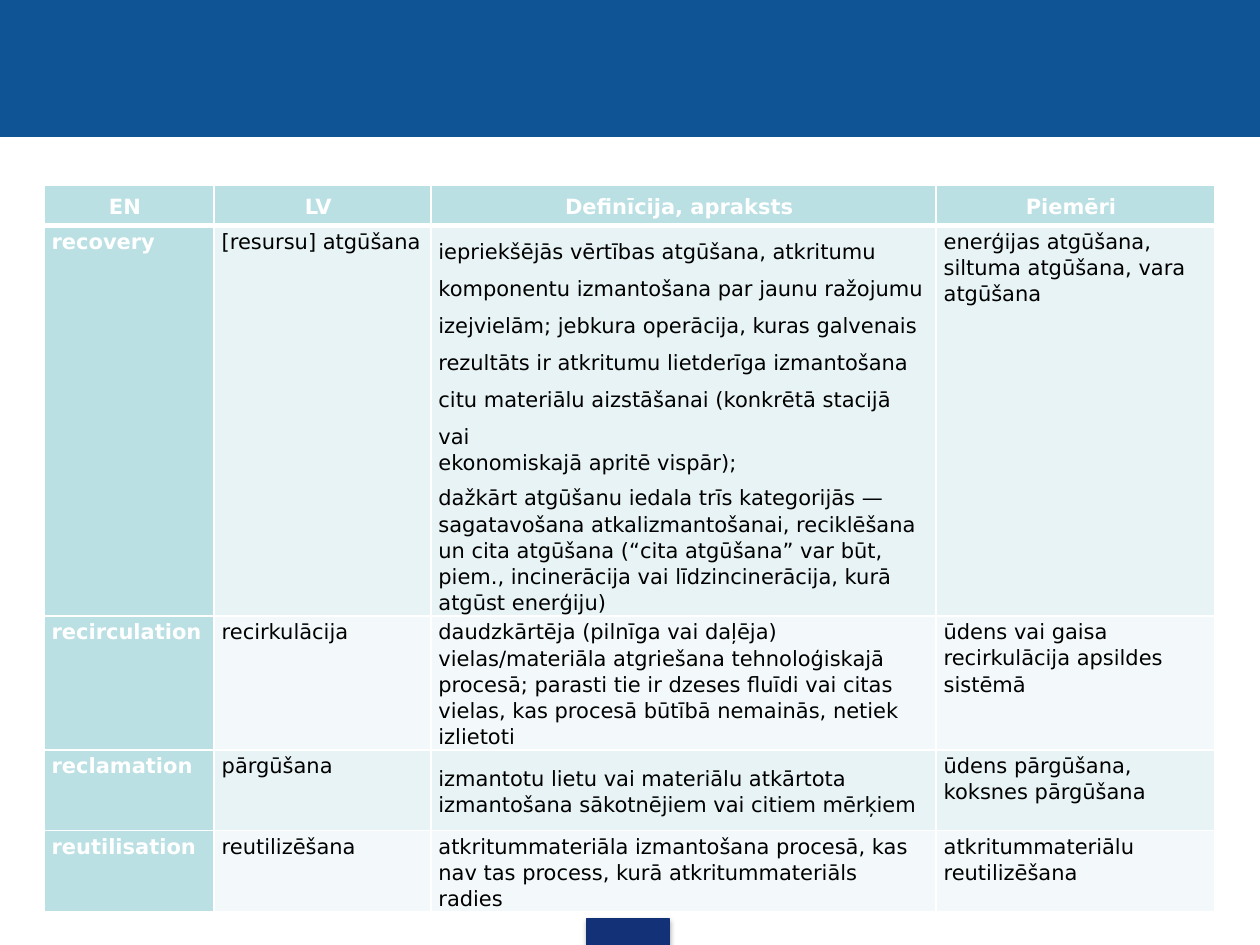
from dataclasses import dataclass

import pptx
import pptx.dml.color
import pptx.enum.shapes
import pptx.enum.text
import pptx.oxml
import pptx.oxml.ns
import pptx.util
from pptx.util import Inches

MIDDLE = pptx.enum.text.MSO_ANCHOR.MIDDLE
TOP = pptx.enum.text.MSO_ANCHOR.TOP
CENTER = pptx.enum.text.PP_ALIGN.CENTER
LEFT = pptx.enum.text.PP_ALIGN.LEFT


@dataclass(frozen=True)
class Theme:
    font: str = "DejaVu Sans"
    size: float = 12
    banner: str = "0F5494"
    tab: str = "133176"
    white: str = "FFFFFF"
    black: str = "000000"
    heading: str = "BBE0E3"
    bands: tuple[str, str] = ("E7F3F4", "F3F9FA")
    thin: float = 1
    thick: float = 3


@dataclass(frozen=True)
class Para:
    text: str
    spacing: float = 1.07
    after: float = 0


@dataclass(frozen=True)
class Term:
    english: str
    latvian: str
    definition: tuple[Para, ...]
    examples: tuple[Para, ...]
    height: float


THEME = Theme()
HEADINGS = ("EN ", "LV ", "Definīcija, apraksts ", "Piemēri ")
COLUMN_WIDTHS = (1.35, 1.72, 4.01, 2.21)
HEADER_HEIGHT = 0.32
DEFINITION_COLUMN = 2

TERMS = (
    Term(
        "recovery",
        "[resursu] atgūšana",
        (
            Para("iepriekšējās vērtības atgūšana, atkritumu komponentu izmantošana "
                 "par jaunu ražojumu izejvielām; jebkura operācija, kuras galvenais "
                 "rezultāts ir atkritumu lietderīga izmantošana citu materiālu "
                 "aizstāšanai (konkrētā stacijā vai", spacing=1.5),
            Para("ekonomiskajā apritē vispār);", after=5),
            Para("dažkārt atgūšanu iedala trīs kategorijās — sagatavošana "
                 "atkalizmantošanai, reciklēšana un cita atgūšana (“cita atgūšana” "
                 "var būt, piem., incinerācija vai līdzincinerācija, kurā atgūst "
                 "enerģiju)"),
        ),
        (Para("enerģijas atgūšana, siltuma atgūšana, vara atgūšana"),),
        2.78,
    ),
    Term(
        "recirculation",
        "recirkulācija",
        (Para("daudzkārtēja (pilnīga vai daļēja) vielas/materiāla atgriešana "
              "tehnoloģiskajā procesā; parasti tie ir dzeses fluīdi vai citas "
              "vielas, kas procesā būtībā nemainās, netiek izlietoti"),),
        (Para("ūdens vai gaisa recirkulācija apsildes sistēmā"),),
        0.97,
    ),
    Term(
        "reclamation",
        "pārgūšana",
        (Para("izmantotu lietu vai materiālu atkārtota izmantošana sākotnējiem "
              "vai citiem mērķiem"),),
        (Para("ūdens pārgūšana,"), Para("koksnes pārgūšana")),
        0.64,
    ),
    Term(
        "reutilisation",
        "reutilizēšana",
        (Para("atkritummateriāla izmantošana procesā, kas nav tas process, kurā "
              "atkritummateriāls radies"),),
        (Para("atkritummateriālu reutilizēšana"),),
        0.64,
    ),
)


def rgb(value: str) -> pptx.dml.color.RGBColor:
    return pptx.dml.color.RGBColor.from_string(value)


def add_bar(slide, left: float, top: float, width: float, height: float, color: str):
    sp = slide.shapes.add_shape(
        pptx.enum.shapes.MSO_SHAPE.RECTANGLE,
        Inches(left), Inches(top), Inches(width), Inches(height))
    sp.shadow.inherit = False
    sp.fill.solid()
    sp.fill.fore_color.rgb = rgb(color)
    sp.line.color.rgb = rgb(color)
    sp.line.width = pptx.util.Pt(0.75)
    return sp


def add_soft_shadow(sp) -> None:
    """Fill the shape's empty effect list with a shadow that falls downwards."""
    effects = sp._element.spPr.find(pptx.oxml.ns.qn("a:effectLst"))
    effects.append(pptx.oxml.parse_xml(
        f'<a:outerShdw {pptx.oxml.ns.nsdecls("a")} blurRad="{pptx.util.Pt(3.1)}" '
        f'dist="{pptx.util.Pt(1.8)}" dir="5400000" rotWithShape="0">'
        f'<a:srgbClr val="{THEME.black}"><a:alpha val="35000"/></a:srgbClr>'
        '</a:outerShdw>'))


def set_borders(cell, top: float, bottom: float) -> None:
    widths = {"L": THEME.thin, "R": THEME.thin, "T": top, "B": bottom}
    tc_pr = cell._tc.get_or_add_tcPr()
    for index, (side, width) in enumerate(widths.items()):
        tc_pr.insert(index, pptx.oxml.parse_xml(
            f'<a:ln{side} {pptx.oxml.ns.nsdecls("a")} w="{pptx.util.Pt(width)}">'
            f'<a:solidFill><a:srgbClr val="{THEME.white}"/></a:solidFill>'
            f'</a:ln{side}>'))


def fill_cell(cell, paras: tuple[Para, ...], row: int, column: int) -> None:
    header = row == 0
    heading = header or column == 0
    cell.margin_left, cell.margin_right = Inches(0.06), Inches(0.07)
    cell.margin_top, cell.margin_bottom = Inches(0.02), Inches(0)
    cell.vertical_anchor = MIDDLE if header or column == DEFINITION_COLUMN else TOP
    cell.fill.solid()
    cell.fill.fore_color.rgb = rgb(
        THEME.heading if heading else THEME.bands[(row - 1) % 2])
    set_borders(cell,
                top=THEME.thick if row == 1 else THEME.thin,
                bottom=THEME.thick if header else THEME.thin)
    tf = cell.text_frame
    for index, para in enumerate(paras):
        p = tf.add_paragraph() if index else tf.paragraphs[0]
        p.alignment = CENTER if header else LEFT
        p.line_spacing = para.spacing
        p.space_after = pptx.util.Pt(para.after)
        r = p.add_run()
        r.text = para.text
        r.font.name = THEME.font
        r.font.size = pptx.util.Pt(THEME.size)
        r.font.bold = heading
        r.font.color.rgb = rgb(THEME.white if heading else THEME.black)


def add_glossary(slide, left: float, top: float) -> None:
    heights = (HEADER_HEIGHT, *(term.height for term in TERMS))
    table = slide.shapes.add_table(
        len(heights), len(COLUMN_WIDTHS), Inches(left), Inches(top),
        Inches(sum(COLUMN_WIDTHS)), Inches(sum(heights))).table
    for column, width in zip(table.columns, COLUMN_WIDTHS):
        column.width = Inches(width)
    for row, height in zip(table.rows, heights):
        row.height = Inches(height)
    rows = [tuple((Para(text),) for text in HEADINGS)]
    rows += [((Para(t.english),), (Para(t.latvian),), t.definition, t.examples)
             for t in TERMS]
    for i, row in enumerate(rows):
        for j, paras in enumerate(row):
            fill_cell(table.cell(i, j), paras, i, j)


def main() -> None:
    prs = pptx.Presentation()
    prs.slide_width, prs.slide_height = Inches(10), Inches(7.5)
    slide = prs.slides.add_slide(prs.slide_layouts[6])
    add_bar(slide, 0, 0, 10, 1.08, THEME.banner)
    add_soft_shadow(add_bar(slide, 4.66, 7.29, 0.65, 0.22, THEME.tab))
    add_glossary(slide, 0.35, 1.47)
    prs.save("out.pptx")


if __name__ == "__main__":
    main()
